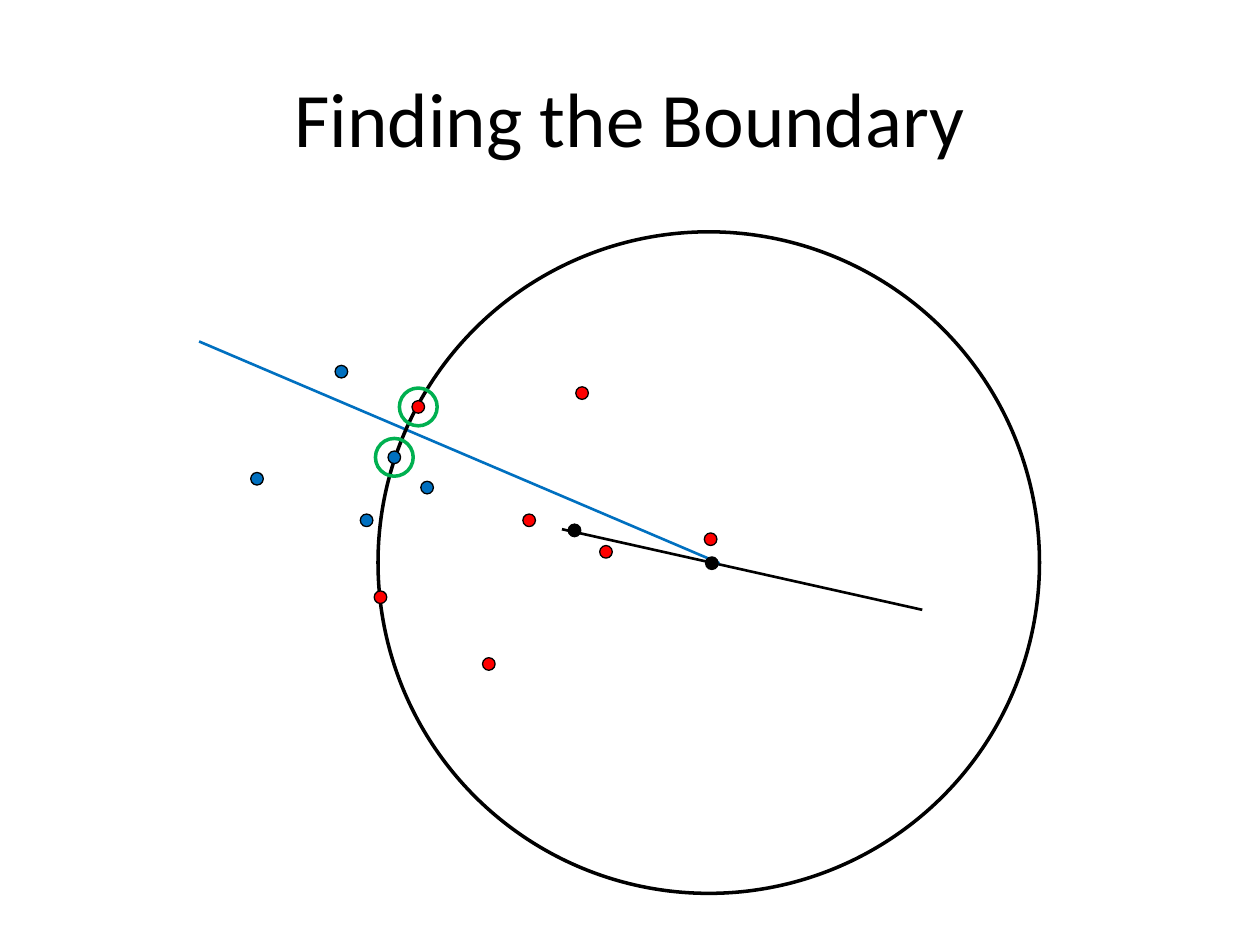
import dataclasses
import typing

import pptx
import pptx.dml.color
import pptx.enum.shapes
import pptx.enum.text
import pptx.oxml.ns
import pptx.util
import lxml.etree

# Grid of square cells, 100 columns by 75 rows
CELL = 0.1
COLS, ROWS = 100, 75
BLACK, BLUE, RED, GREEN = "000000", "0070C0", "FF0000", "00B050"
DOT_SIZE, RING_SIZE = 1, 3


@dataclasses.dataclass
class Circle:
    col: float  # centre
    row: float
    size: float
    line: str = BLACK
    weight: float = 0.75
    fill: typing.Optional[str] = None


@dataclasses.dataclass
class Segment:
    start: tuple[float, float]
    end: tuple[float, float]
    color: str
    weight: float = 1.5


SEGMENTS = [
    Segment((44.6, 42), (73.2, 48.4), BLACK),
    Segment((15.8, 27.1), (57.1, 44.7), BLUE),
]
BOUNDARY = Circle(56.25, 44.65, 52.5, weight=2)
DOTS = {
    BLUE: [(27.1, 29.5), (20.4, 38), (29.1, 41.3), (33.9, 38.7), (31.3, 36.3)],
    RED: [(46.2, 31.2), (42, 41.3), (48.1, 43.8), (56.4, 42.8),
          (38.8, 52.7), (30.2, 47.4), (33.2, 32.3)],
    BLACK: [(56.5, 44.7), (45.6, 42.1)],
}
RINGS = [(31.3, 36.3), (33.2, 32.3)]


def cells(n: float) -> int:
    return pptx.util.Inches(n * CELL)


def rgb(color: str) -> pptx.dml.color.RGBColor:
    return pptx.dml.color.RGBColor.from_string(color)


def draw_segment(shapes, seg: Segment) -> None:
    ends = [cells(n) for n in seg.start + seg.end]
    c = shapes.add_connector(pptx.enum.shapes.MSO_CONNECTOR.STRAIGHT, *ends)
    c.line.color.rgb = rgb(seg.color)
    c.line.width = pptx.util.Pt(seg.weight)
    lxml.etree.SubElement(c._element.spPr, pptx.oxml.ns.qn("a:effectLst"))


def draw_circle(shapes, circle: Circle) -> None:
    half = circle.size / 2
    sp = shapes.add_shape(
        pptx.enum.shapes.MSO_SHAPE.OVAL,
        cells(circle.col - half), cells(circle.row - half),
        cells(circle.size), cells(circle.size))
    sp.shadow.inherit = False
    sp.line.color.rgb = rgb(circle.line)
    sp.line.width = pptx.util.Pt(circle.weight)
    if circle.fill:
        sp.fill.solid()
        sp.fill.fore_color.rgb = rgb(circle.fill)
    else:
        sp.fill.background()


def draw_title(shapes, text: str) -> None:
    sp = shapes.add_textbox(cells(5), cells(3), cells(COLS - 10), cells(12.5))
    tf = sp.text_frame
    tf.word_wrap = True
    tf.vertical_anchor = pptx.enum.text.MSO_ANCHOR.MIDDLE
    tf.text = text
    p = tf.paragraphs[0]
    p.alignment = pptx.enum.text.PP_ALIGN.CENTER
    r = p.runs[0]
    r.font.name = "Calibri"
    r.font.size = pptx.util.Pt(44)
    r.font.color.rgb = rgb(BLACK)


def main() -> None:
    prs = pptx.Presentation()
    prs.slide_width, prs.slide_height = cells(COLS), cells(ROWS)
    s = prs.slides.add_slide(prs.slide_layouts[6])
    draw_title(s.shapes, "Finding the Boundary")

    # Diagram: lines, boundary circle, points, then rings on top
    diagram = s.shapes.add_group_shape().shapes
    for seg in SEGMENTS:
        draw_segment(diagram, seg)
    draw_circle(diagram, BOUNDARY)
    for color, centres in DOTS.items():
        for col, row in centres:
            draw_circle(diagram, Circle(col, row, DOT_SIZE, fill=color))
    for col, row in RINGS:
        draw_circle(diagram, Circle(col, row, RING_SIZE, GREEN, 2))

    prs.save("out.pptx")


if __name__ == "__main__":
    main()
